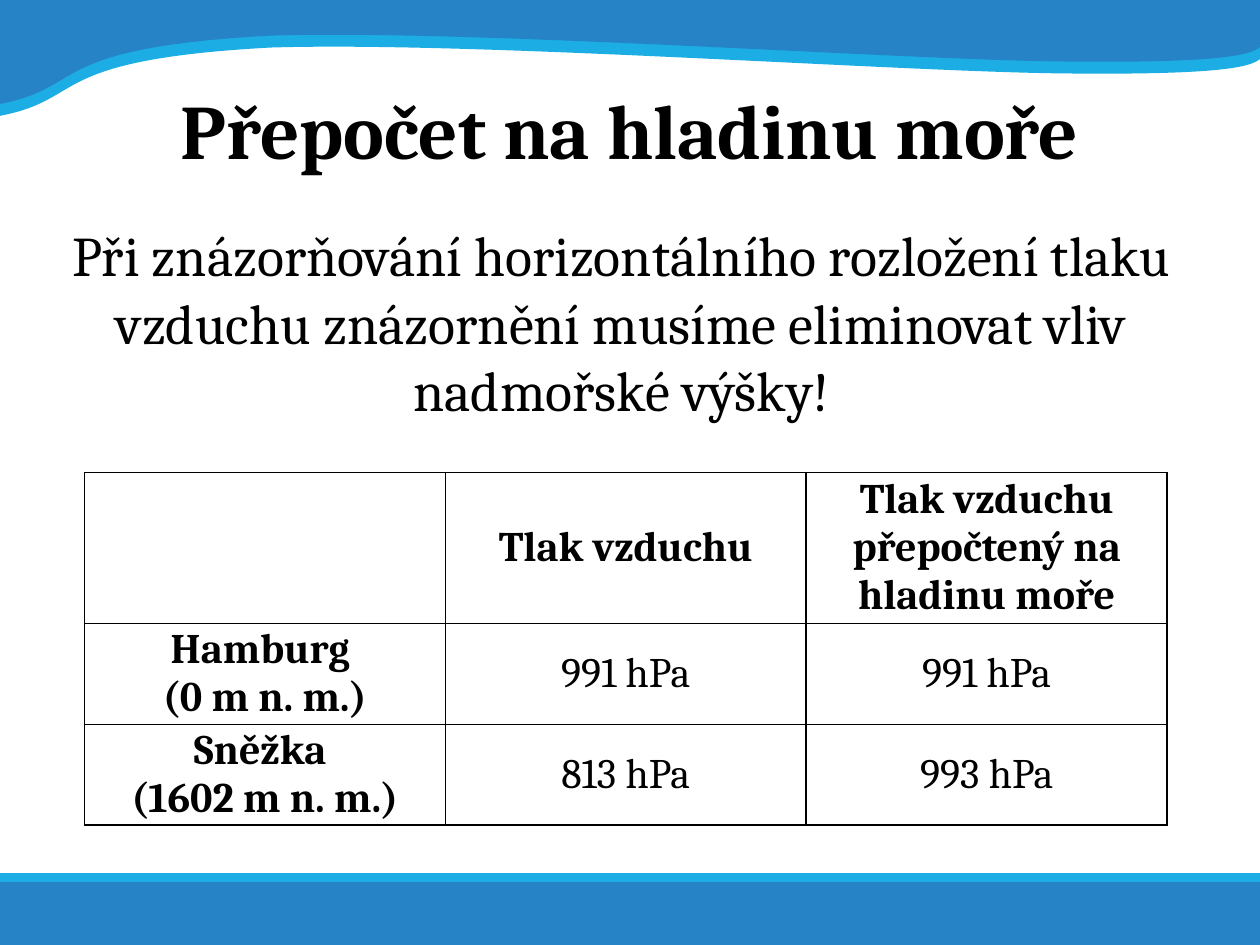
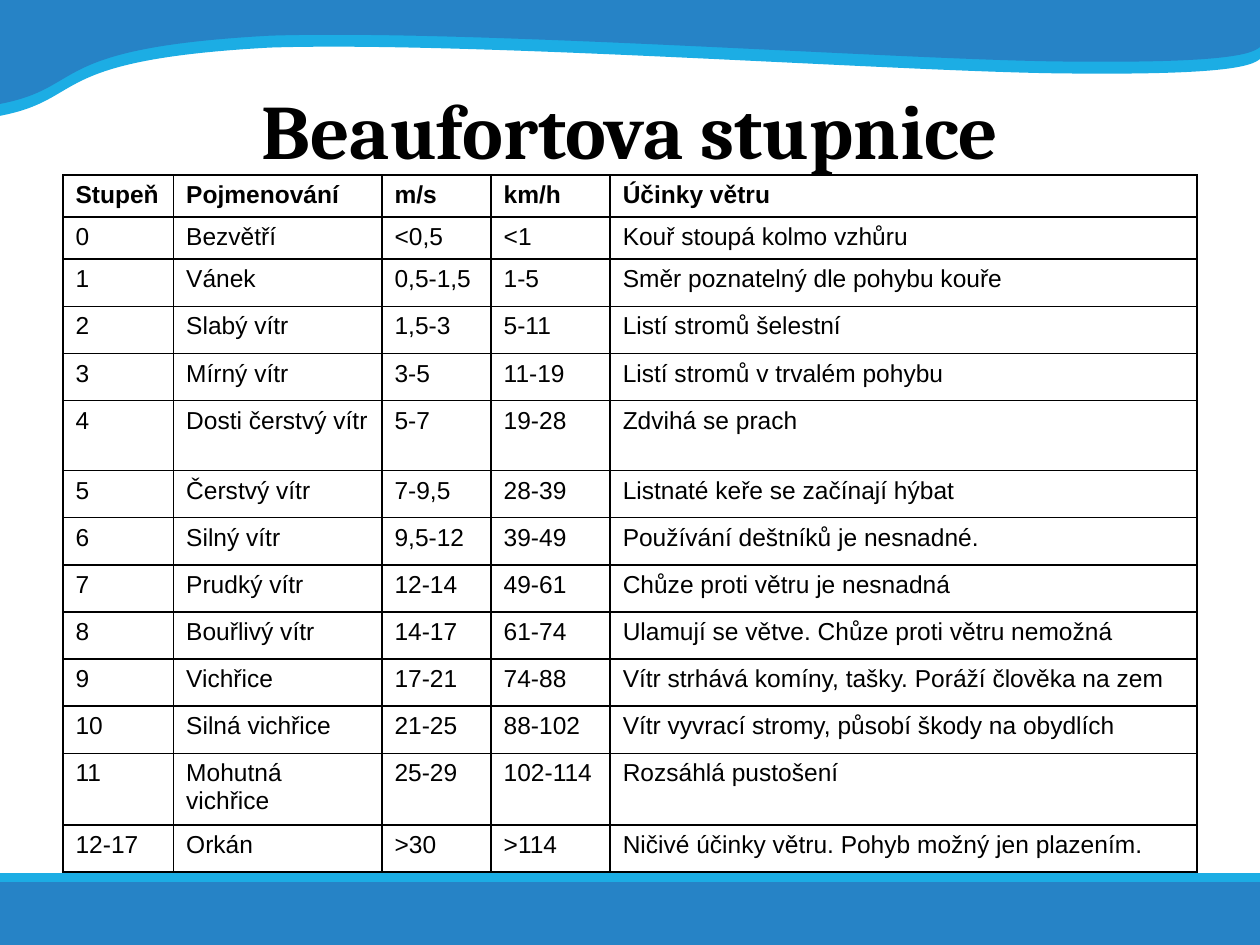
import pptx
import pptx.util
import pptx.dml.color
import pptx.enum.shapes
import pptx.enum.text
import pptx.oxml
import pptx.oxml.ns
from dataclasses import dataclass
from pptx.util import Cm

ALIGN = pptx.enum.text.PP_ALIGN
ANCHOR = pptx.enum.text.MSO_ANCHOR


@dataclass(frozen=True)
class Theme:
    blue: str = "2683C6"
    cyan: str = "1CADE4"
    black: str = "000000"
    serif: str = "Cambria"
    sans: str = "Arial"
    title: int = 44
    body: int = 32
    table: int = 24
    small: int = 14
    border: int = 1


@dataclass(frozen=True)
class Box:
    left: float
    top: float
    width: float
    height: float

    def emu(self):
        return Cm(self.left), Cm(self.top), Cm(self.width), Cm(self.height)


THEME = Theme()
SLIDE = Box(0, 0, 25.4, 19.05)
TITLE = Box(1.27, 0.76, 22.86, 3.68)
BODY = Box(1.1, 4.33, 22.86, 12.29)
PRESSURE = Box(1.7, 9.52, 21.83, 7.11)
BEAUFORT = Box(1.27, 3.53, 22.86, 14)

# Top edge of the wave, then the Bézier segments of its lower edge, right to left
WAVE_TOP = [(0, -0.02), (25.4, 0)]
WAVE_CURVES = [
    [(25.4, 0.31), (25.4, 0.63), (25.4, 0.95)],
    [(25.22, 1.1), (24.69, 1.28), (21.36, 1.24)],
    [(18.03, 1.2), (9.47, 0.59), (5.44, 0.72)],
    [(0.86, 0.97), (1.78, 1.76), (-0.02, 2.1)],
]
WAVE_DROP = 0.24

PRESSURE_ROWS = [
    ["", "Tlak vzduchu", "Tlak vzduchu přepočtený na hladinu moře"],
    ["Hamburg \n(0 m n. m.)", "991 hPa", "991 hPa"],
    ["Sněžka \n(1602 m n. m.)", "813 hPa", "993 hPa"],
]
PRESSURE_HEIGHTS = [2.51, 1.75, 1.75]

BEAUFORT_ROWS = [
    ["Stupeň", "Pojmenování", "m/s", "km/h", "Účinky větru"],
    ["0", "Bezvětří", "<0,5", "<1", "Kouř stoupá kolmo vzhůru"],
    ["1", "Vánek", "0,5-1,5", "1-5", "Směr poznatelný dle pohybu kouře"],
    ["2", "Slabý vítr", "1,5-3", "5-11", "Listí stromů šelestní"],
    ["3", "Mírný vítr", "3-5", "11-19", "Listí stromů v trvalém pohybu"],
    ["4", "Dosti čerstvý vítr", "5-7", "19-28", "Zdvihá se prach"],
    ["5", "Čerstvý vítr", "7-9,5", "28-39", "Listnaté keře se začínají hýbat"],
    ["6", "Silný vítr", "9,5-12", "39-49", "Používání deštníků je nesnadné."],
    ["7", "Prudký vítr", "12-14", "49-61", "Chůze proti větru je nesnadná"],
    ["8", "Bouřlivý vítr", "14-17", "61-74", "Ulamují se větve. Chůze proti větru nemožná"],
    ["9", "Vichřice", "17-21", "74-88", "Vítr strhává komíny, tašky. Poráží člověka na zem"],
    ["10", "Silná vichřice", "21-25", "88-102", "Vítr vyvrací stromy, působí škody na obydlích"],
    ["11", "Mohutná vichřice", "25-29", "102-114", "Rozsáhlá pustošení"],
    ["12-17", "Orkán", ">30", ">114", "Ničivé účinky větru. Pohyb možný jen plazením."],
]
BEAUFORT_WIDTHS = [2.23, 4.2, 2.2, 2.4, 11.83]
BEAUFORT_TALL_ROWS = (5, 12)


def rgb(color):
    return pptx.dml.color.RGBColor.from_string(color)


def paint(sp, color):
    sp.shadow.inherit = False
    sp.fill.solid()
    sp.fill.fore_color.rgb = rgb(color)
    sp.line.fill.background()


def write(tf, text, font, size, bold=False, align=ALIGN.LEFT):
    """Fill a text frame with one paragraph per line of text."""
    tf.word_wrap = True
    for i, line in enumerate(text.split("\n")):
        p = tf.add_paragraph() if i else tf.paragraphs[0]
        p.alignment = align
        r = p.add_run()
        r.text = line
        r.font.name = font
        r.font.size = pptx.util.Pt(size)
        r.font.bold = bold
        r.font.color.rgb = rgb(THEME.black)


def add_text(slide, box, text, size, bold=False, anchor=ANCHOR.TOP):
    tf = slide.shapes.add_textbox(*box.emu()).text_frame
    tf.vertical_anchor = anchor
    write(tf, text, THEME.serif, size, bold, ALIGN.CENTER)


def add_wave(slide, box, drop, color):
    points = WAVE_TOP + [point for curve in WAVE_CURVES for point in curve]
    start, *rest = [(Cm(box.left + x), Cm(box.top + y + drop)) for x, y in points]
    fb = slide.shapes.build_freeform(*start)
    fb.add_line_segments(rest)
    sp = fb.convert_to_shape()
    bend_lines(sp, len(WAVE_TOP) - 1)
    paint(sp, color)


def bend_lines(sp, straight):
    """Turn each three line segments after the straight ones into one Bézier curve."""
    qn = pptx.oxml.ns.qn
    lines = list(sp._element.iter(qn("a:lnTo")))
    lines = lines[straight:straight + 3 * len(WAVE_CURVES)]
    for i in range(0, len(lines), 3):
        curve = lines[i].makeelement(qn("a:cubicBezTo"), {})
        lines[i].addprevious(curve)
        for line in lines[i:i + 3]:
            curve.append(line[0])
            line.getparent().remove(line)


def add_footer(slide, box):
    band, stripe = 1.27, 0.18
    bottom = box.top + box.height
    for top, height, color in ((bottom - band, band, THEME.blue),
                               (bottom - band - stripe, stripe, THEME.cyan)):
        sp = slide.shapes.add_shape(pptx.enum.shapes.MSO_SHAPE.RECTANGLE,
                                    *Box(box.left, top, box.width, height).emu())
        paint(sp, color)


def add_slide(prs, title):
    """Add a blank slide with the shared waves, footer and title."""
    slide = prs.slides.add_slide(prs.slide_layouts[6])
    add_wave(slide, SLIDE, WAVE_DROP, THEME.cyan)
    add_wave(slide, SLIDE, 0, THEME.blue)
    add_footer(slide, SLIDE)
    add_text(slide, TITLE, title, THEME.title, True, ANCHOR.MIDDLE)
    return slide


def outline_cell(cell):
    cell.fill.background()
    tcPr = cell._tc.get_or_add_tcPr()
    for i, side in enumerate(("lnL", "lnR", "lnT", "lnB")):
        tcPr.insert(i, pptx.oxml.parse_xml(
            f'<a:{side} {pptx.oxml.ns.nsdecls("a")} w="{pptx.util.Pt(THEME.border)}">'
            f'<a:solidFill><a:srgbClr val="{THEME.black}"/></a:solidFill></a:{side}>'))


def add_grid(slide, box, rows, widths, heights):
    """Add an unfilled, outlined table and yield (row, column, cell, text)."""
    frame = slide.shapes.add_table(len(rows), len(widths), *box.emu())
    table = frame.table
    table.first_row = table.horz_banding = False
    for column, width in zip(table.columns, widths):
        column.width = Cm(width)
    for row, height in zip(table.rows, heights):
        row.height = Cm(height)
    frame.height = Cm(box.height)
    for i, texts in enumerate(rows):
        for j, text in enumerate(texts):
            cell = table.cell(i, j)
            outline_cell(cell)
            yield i, j, cell, text


def add_pressure_table(slide, box):
    widths = [box.width / 3] * 3
    for i, j, cell, text in add_grid(slide, box, PRESSURE_ROWS, widths, PRESSURE_HEIGHTS):
        if not text:
            continue
        cell.margin_left = cell.margin_right = cell.margin_top = cell.margin_bottom = 0
        cell.vertical_anchor = ANCHOR.MIDDLE
        write(cell.text_frame, text, THEME.serif, THEME.table, i == 0 or j == 0, ALIGN.CENTER)


def add_beaufort_table(slide, box):
    heights = [0.84 if i < 2 else 1.41 if i in BEAUFORT_TALL_ROWS else 0.95
               for i in range(len(BEAUFORT_ROWS))]
    for i, _, cell, text in add_grid(slide, box, BEAUFORT_ROWS, BEAUFORT_WIDTHS, heights):
        write(cell.text_frame, text, THEME.sans, THEME.small, i == 0)


def pressure_slide(prs):
    slide = add_slide(prs, "Přepočet na hladinu moře")
    add_text(slide, BODY, "Při znázorňování horizontálního rozložení tlaku vzduchu "
             "znázornění musíme eliminovat vliv nadmořské výšky!", THEME.body)
    add_pressure_table(slide, PRESSURE)


def beaufort_slide(prs):
    slide = add_slide(prs, "Beaufortova stupnice")
    add_beaufort_table(slide, BEAUFORT)


def main():
    prs = pptx.Presentation()
    prs.slide_width, prs.slide_height = Cm(SLIDE.width), Cm(SLIDE.height)
    pressure_slide(prs)
    beaufort_slide(prs)
    prs.save("out.pptx")


if __name__ == "__main__":
    main()
